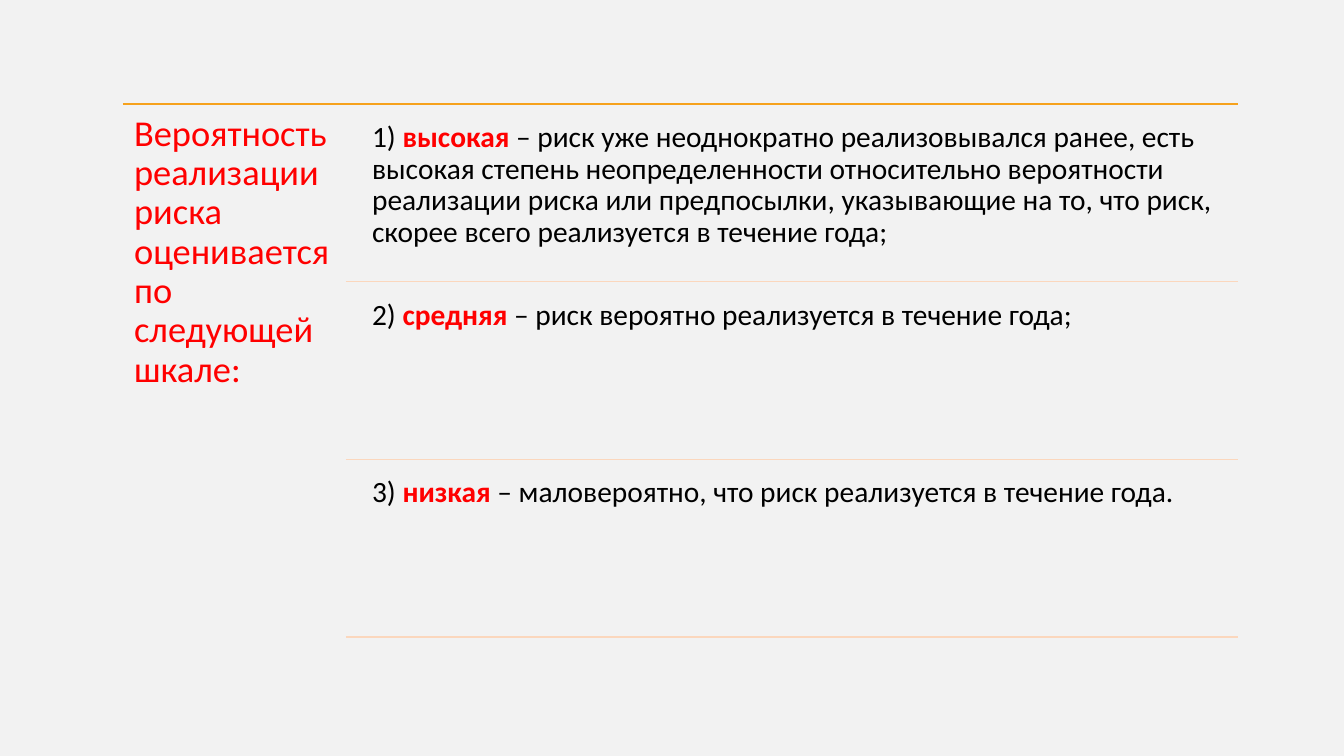
"""Build a slide that explains the three-level risk probability scale."""
from dataclasses import dataclass

from lxml import etree
from pptx import Presentation
from pptx.dml.color import RGBColor
from pptx.enum import shapes, text
from pptx.oxml import ns
from pptx.util import Inches, Pt

BACKGROUND = RGBColor(0xF2, 0xF2, 0xF2)
ORANGE = RGBColor(0xF6, 0xA2, 0x1D)
PEACH = RGBColor(0xFB, 0xD7, 0xBD)
RED = RGBColor(0xFF, 0x00, 0x00)
BLACK = RGBColor(0x00, 0x00, 0x00)
FONT = "Calibri"

LEFT, RIGHT = 1.22, 12.28
TOP, BOTTOM = 1.03, 6.32
HEADING_W, HEADING_H = 2.21, 5.37
RULE_X = LEFT + HEADING_W
ITEM_X = 3.6
ITEM_GAP = 0.09
HEADING = "Вероятность реализации риска оценивается по следующей шкале:"


@dataclass(frozen=True)
class Level:
    """One level of the probability scale."""

    name: str
    meaning: str


LEVELS = [
    Level("высокая", "риск уже неоднократно реализовывался ранее, есть высокая степень "
          "неопределенности относительно вероятности реализации риска или предпосылки, "
          "указывающие на то, что риск, скорее всего реализуется в течение года;"),
    Level("средняя", "риск вероятно реализуется в течение года;"),
    Level("низкая", "маловероятно, что риск реализуется в течение года."),
]
ROW_H = (BOTTOM - TOP) / len(LEVELS)


def add_rule(slide, x: float, y: float, color: RGBColor) -> None:
    """Draw a horizontal rule from x to the right margin."""
    line = slide.shapes.add_connector(
        shapes.MSO_CONNECTOR.STRAIGHT, Inches(x), Inches(y), Inches(RIGHT), Inches(y))
    line.line.color.rgb = color
    line.line.width = Pt(1)
    etree.SubElement(line._element.spPr, ns.qn("a:effectLst"))


def set_frame(tf, inset: float) -> None:
    """Give a text frame its insets, top anchor and paragraph spacing."""
    tf.word_wrap = True
    tf.auto_size = text.MSO_AUTO_SIZE.NONE
    tf.vertical_anchor = text.MSO_ANCHOR.TOP
    tf.margin_left = tf.margin_right = tf.margin_top = tf.margin_bottom = Inches(inset)
    p = tf.paragraphs[0]
    p.alignment = text.PP_ALIGN.LEFT
    p.line_spacing = 0.9


def format_run(r, size: int, color: RGBColor, bold: bool = False) -> None:
    """Set the font of a run."""
    r.font.name = FONT
    r.font.size = Pt(size)
    r.font.bold = bold
    r.font.color.rgb = color


def add_heading(slide) -> None:
    """Fill the title placeholder and move it to the left column."""
    sp = slide.shapes.title
    sp.left, sp.top = Inches(LEFT), Inches(TOP)
    sp.width, sp.height = Inches(HEADING_W), Inches(HEADING_H)
    sp.text_frame.text = HEADING
    set_frame(sp.text_frame, 0.11)
    format_run(sp.text_frame.paragraphs[0].runs[0], 26, RED)


def add_level(slide, index: int, level: Level) -> None:
    """Write one level in its row and close the row with a rule."""
    y = TOP + index * ROW_H
    sp = slide.shapes.add_textbox(
        Inches(ITEM_X), Inches(y + ITEM_GAP),
        Inches(RIGHT - ITEM_X), Inches(ROW_H - ITEM_GAP))
    set_frame(sp.text_frame, 0.09)
    p = sp.text_frame.paragraphs[0]
    parts = [(f"{index + 1}) ", False), (level.name, True), (f" – {level.meaning}", False)]
    for words, key in parts:
        r = p.add_run()
        r.text = words
        format_run(r, 21, RED if key else BLACK, key)
    add_rule(slide, RULE_X, y + ROW_H, PEACH)


def main() -> None:
    """Build and save the slide."""
    prs = Presentation()
    prs.slide_width, prs.slide_height = Inches(13.33), Inches(7.5)
    slide = prs.slides.add_slide(prs.slide_layouts.get_by_name("Title Only"))
    slide.background.fill.solid()
    slide.background.fill.fore_color.rgb = BACKGROUND
    add_rule(slide, LEFT, TOP, ORANGE)
    add_heading(slide)
    for index, level in enumerate(LEVELS):
        add_level(slide, index, level)
    prs.save("out.pptx")


if __name__ == "__main__":
    main()
